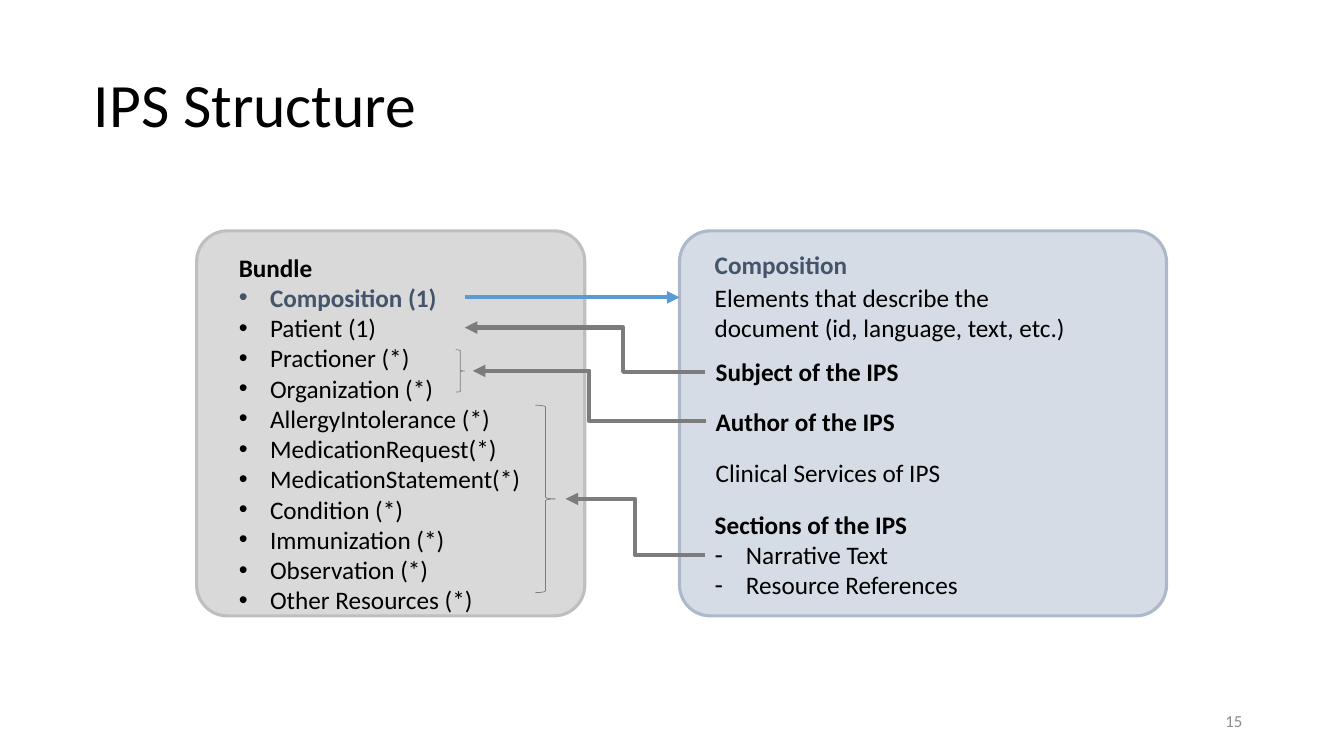
"""Build the IPS Structure slide."""
from lxml import etree
from pptx import Presentation
from pptx import util as u
from pptx.dml.color import RGBColor
from pptx.enum import shapes, text
from pptx.oxml.ns import qn

COLORS = {
    "black": "000000", "slate": "44546A", "number": "8C8C8C",
    "bundle": "D9D9D9", "bundle_edge": "BFBFBF",
    "composition": "D6DCE5", "composition_edge": "ADB9CA",
    "blue": "5B9BD5", "gray": "7C7C7C",
}
RESOURCES = [
    "Patient (1)", "Practioner (*)", "Organization (*)", "AllergyIntolerance (*)",
    "MedicationRequest(*)", "MedicationStatement(*)", "Condition (*)",
    "Immunization (*)", "Observation (*)", "Other Resources (*)",
]


def rgb(name):
    """Return the named colour."""
    return RGBColor.from_string(COLORS[name])


def inches(*lengths):
    """Convert several lengths to Inches."""
    return [u.Inches(length) for length in lengths]


def write(paragraph, words, size=18, color="black", bold=False):
    """Add one formatted run to a paragraph."""
    run = paragraph.add_run()
    run.text = words
    run.font.name = "Calibri"
    run.font.size = u.Pt(size)
    run.font.bold = bold
    run.font.color.rgb = rgb(color)


def add_text(slide, box, heading, color="black", bold=False, items=(), bullet="•"):
    """Add a text box with a heading and bulleted (words, colour, bold) items."""
    frame = slide.shapes.add_textbox(*inches(*box)).text_frame
    frame.word_wrap = True
    frame.auto_size = text.MSO_AUTO_SIZE.SHAPE_TO_FIT_TEXT
    write(frame.paragraphs[0], heading, color=color, bold=bold)
    for words, item_color, item_bold in items:
        item = frame.add_paragraph()
        write(item, words, color=item_color, bold=item_bold)
        props = item._p.get_or_add_pPr()
        indent = u.Inches(0.31)
        props.set("marL", str(indent))
        props.set("indent", str(-indent))
        etree.SubElement(props, qn("a:buFont")).set("typeface", "Arial")
        etree.SubElement(props, qn("a:buChar")).set("char", bullet)


def add_panel(slide, left, width, name):
    """Add a rounded panel with its matching edge."""
    panel = slide.shapes.add_shape(
        shapes.MSO_SHAPE.ROUNDED_RECTANGLE, *inches(left, 2.29, width, 3.82))
    panel.adjustments[0] = 0.08
    panel.shadow.inherit = False
    panel.fill.solid()
    panel.fill.fore_color.rgb = rgb(name)
    panel.line.color.rgb = rgb(name + "_edge")
    panel.line.width = u.Pt(2.25)


def add_brace(slide, *box):
    """Add a thin right brace around a group of resources."""
    brace = slide.shapes.add_shape(shapes.MSO_SHAPE.RIGHT_BRACE, *inches(*box))
    brace.shadow.inherit = False
    brace.fill.background()
    brace.line.color.rgb = rgb("gray")
    brace.line.width = u.Pt(0.5)


def add_arrow(slide, ends, kind=shapes.MSO_CONNECTOR.ELBOW, color="gray", bend=0.5):
    """Add an arrow whose elbow, if any, lies at the given share of its width."""
    arrow = slide.shapes.add_connector(kind, *inches(*ends))
    arrow.line.color.rgb = rgb(color)
    arrow.line.width = u.Pt(3)
    etree.SubElement(arrow.line._get_or_add_ln(), qn("a:tailEnd")).set("type", "triangle")
    props = arrow._element.spPr
    etree.SubElement(props, qn("a:effectLst"))
    if kind == shapes.MSO_CONNECTOR.ELBOW:
        guide = etree.SubElement(props.find(".//" + qn("a:avLst")), qn("a:gd"))
        guide.set("name", "adj1")
        guide.set("fmla", f"val {round(bend * 100000)}")


def add_title(slide, words):
    """Place and fill the title placeholder."""
    title = slide.shapes.title
    title.left, title.top, title.width, title.height = inches(0.83, 0.34, 11.5, 1.45)
    frame = title.text_frame
    frame.auto_size = text.MSO_AUTO_SIZE.NONE
    frame.vertical_anchor = text.MSO_ANCHOR.MIDDLE
    heading = frame.paragraphs[0]
    heading.alignment = text.PP_ALIGN.LEFT
    heading.line_spacing = 0.9
    write(heading, words, size=44)


def add_page_number(slide, number):
    """Add the page number at the lower right."""
    frame = slide.shapes.add_textbox(*inches(9.42, 6.95, 3, 0.4)).text_frame
    frame.word_wrap = True
    frame.vertical_anchor = text.MSO_ANCHOR.MIDDLE
    frame.paragraphs[0].alignment = text.PP_ALIGN.RIGHT
    write(frame.paragraphs[0], number, size=12, color="number")


def main():
    """Build and save the slide."""
    deck = Presentation()
    deck.slide_width, deck.slide_height = inches(13.33, 7.5)
    slide = deck.slides.add_slide(deck.slide_layouts[5])
    add_title(slide, "IPS Structure")
    add_page_number(slide, "15")

    add_panel(slide, 1.95, 3.85, "bundle")
    entries = [("Composition (1)", "slate", True)]
    entries += [(resource, "black", False) for resource in RESOURCES]
    add_text(slide, (2.27, 2.45, 3.09, 3.74), "Bundle", bold=True, items=entries)
    add_brace(slide, 4.52, 3.47, 0.09, 0.42)
    add_brace(slide, 5.31, 4.02, 0.2, 1.86)

    add_panel(slide, 6.74, 4.83, "composition")
    for left, top, height, words, color, bold in [
        (6.99, 2.42, 0.4, "Composition", "slate", True),
        (6.99, 2.75, 0.71, "Elements that describe the document "
                           "(id, language, text, etc.)", "black", False),
        (7, 3.49, 0.4, "Subject of the IPS", "black", True),
        (7, 3.98, 0.4, "Author of the IPS", "black", True),
        (7, 4.49, 0.4, "Clinical Services of IPS", "black", False),
    ]:
        add_text(slide, (left, top, 3.98, height), words, color, bold)
    contents = [(words, "black", False) for words in ("Narrative Text", "Resource References")]
    add_text(slide, (6.99, 5, 3.98, 1.01), "Sections of the IPS", bold=True,
             items=contents, bullet="-")

    add_arrow(slide, (4.61, 2.95, 6.74, 2.95), shapes.MSO_CONNECTOR.STRAIGHT, "blue")
    add_arrow(slide, (6.99, 3.69, 4.61, 3.25), bend=0.34)
    add_arrow(slide, (7, 4.18, 4.69, 3.68))
    add_arrow(slide, (6.99, 5.51, 5.61, 4.95))
    deck.save("out.pptx")


if __name__ == "__main__":
    main()
